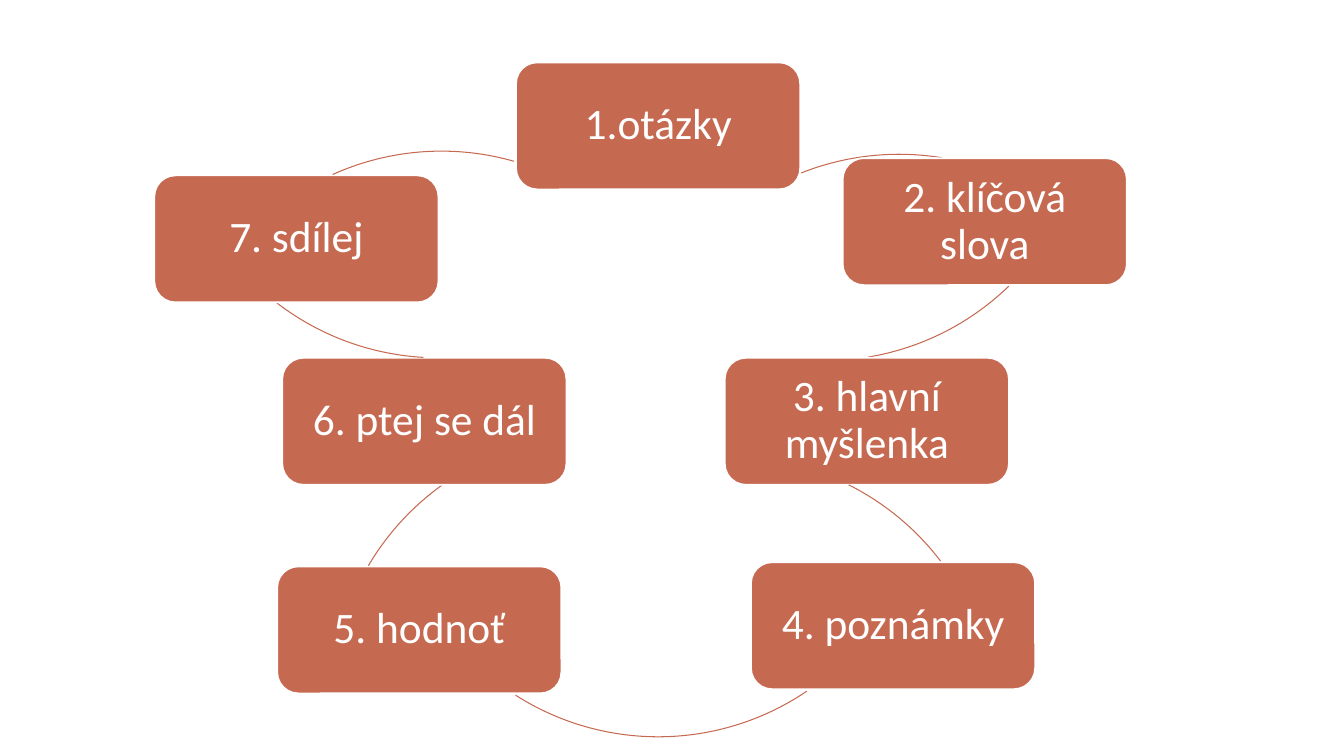
from math import atan2, degrees

from pptx import Presentation
from pptx.dml.color import RGBColor
from pptx.enum.shapes import MSO_SHAPE as SHAPE
from pptx.enum.text import MSO_ANCHOR as ANCHOR, PP_ALIGN as ALIGN
from pptx.util import Pt

STEPS = [
    ("1.otázky", 368.6, 44.6),
    ("2. klíčová slova", 601.9, 113),
    ("3. hlavní myšlenka", 517.7, 255.6),
    ("4. poznámky", 536.4, 401.6),
    ("5. hodnoť", 198, 404.6),
    ("6. ptej se dál", 201.6, 255.6),
    ("7. sdílej", 110.2, 125.3),
]
ARCS = [
    (452.9, 110.2, (572.4, 123.8), (673.2, 113)),
    (399.6, -121, (720.7, 204.5), (619.9, 255.6)),
    (331.9, 326.2, (606.2, 346.3), (671.8, 401)),
    (280.8, 147.6, (576, 493.2), (368.6, 496.1)),
    (236.9, 311, (262.8, 403.9), (315.4, 346.3)),
    (123.8, -123.1, (302.4, 255.6), (197.3, 216.7)),
    (126, 108, (237.6, 124.6), (367.2, 115.2)),
]


def color(value):
    return RGBColor.from_string(value)


def apply(target, formats):
    for name, value in formats.items():
        setattr(target, name, value)


class CycleSlide:
    accent = "C66951"
    white = "FFFFFF"
    box_size = (Pt(203), Pt(90.7))
    circle = 378.7
    angle_unit = 0.6
    frame = dict(word_wrap=True, vertical_anchor=ANCHOR.MIDDLE,
                 margin_left=Pt(9.4), margin_right=Pt(9.4),
                 margin_top=Pt(9.4), margin_bottom=Pt(9.4))
    paragraph = dict(alignment=ALIGN.CENTER, line_spacing=0.9)
    font = dict(name="Calibri", size=Pt(31))

    def __init__(self, slide):
        self.shapes = slide.shapes

    def outline(self, sp, value, width):
        sp.shadow.inherit = False
        sp.line.color.rgb = color(value)
        sp.line.width = Pt(width)

    def box(self, text, left, top):
        sp = self.shapes.add_shape(SHAPE.ROUNDED_RECTANGLE,
                                   Pt(left), Pt(top), *self.box_size)
        sp.fill.solid()
        sp.fill.fore_color.rgb = color(self.accent)
        self.outline(sp, self.white, 1.25)
        tf = sp.text_frame
        apply(tf, self.frame)
        p = tf.paragraphs[0]
        apply(p, self.paragraph)
        r = p.add_run()
        r.text = text
        apply(r.font, self.font)
        r.font.color.rgb = color(self.white)

    def arc(self, left, top, *ends):
        sp = self.shapes.add_shape(SHAPE.ARC, Pt(left), Pt(top),
                                   Pt(self.circle), Pt(self.circle))
        radius = self.circle / 2
        for i, (x, y) in enumerate(ends):
            angle = degrees(atan2(y - top - radius, x - left - radius)) % 360
            sp.adjustments[i] = angle * self.angle_unit
        sp.fill.background()
        self.outline(sp, self.accent, 0.75)


def main():
    prs = Presentation()
    apply(prs, dict(slide_width=Pt(960), slide_height=Pt(540)))
    s = CycleSlide(prs.slides.add_slide(prs.slide_layouts[6]))
    for step, arc in zip(STEPS, ARCS):
        s.box(*step)
        s.arc(*arc)
    prs.save("out.pptx")


if __name__ == "__main__":
    main()
